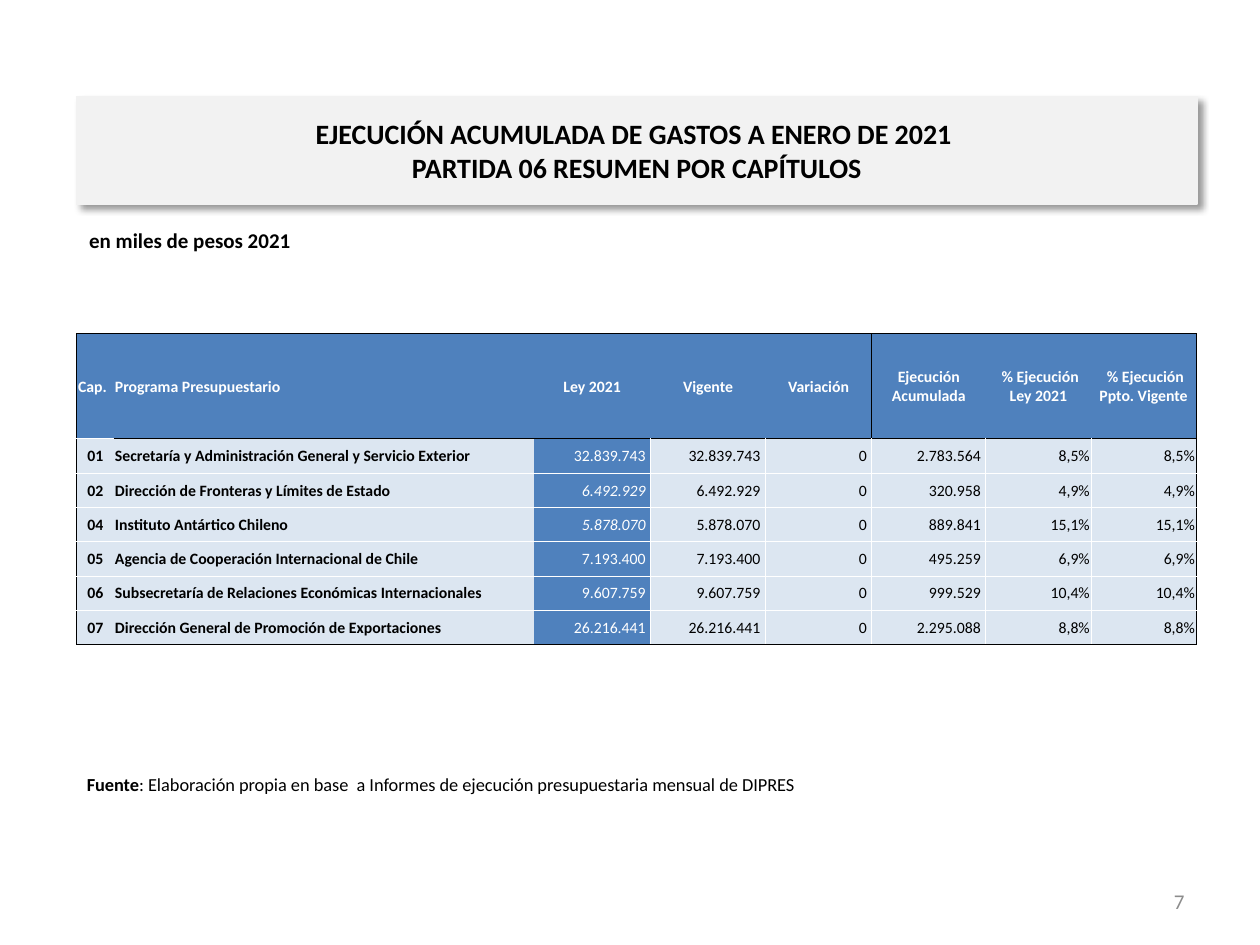
import pptx
import pptx.dml.color
import pptx.enum.shapes
import pptx.enum.text
import pptx.oxml
import pptx.oxml.ns
import pptx.util

COLORS = {"black": "000000", "white": "FFFFFF", "blue": "4F81BD", "pale": "DCE6F1",
          "panel": "F2F2F2", "gray": "8C8C8C"}
ALIGN = pptx.enum.text.PP_ALIGN
MIDDLE = pptx.enum.text.MSO_ANCHOR.MIDDLE
NAMESPACE = pptx.oxml.ns.nsdecls("a")

deck = pptx.Presentation()
deck.slide_width = pptx.util.Inches(10)
deck.slide_height = pptx.util.Inches(7.5)
page = deck.slides.add_slide(deck.slide_layouts[6])


def area(left, top, width, height):
    sides = (deck.slide_width, deck.slide_height) * 2
    return [int(side * share / 100) for side, share in zip(sides, (left, top, width, height))]


def write(para, text, color, align=ALIGN.LEFT, **font_values):
    para.alignment = align
    span = para.add_run()
    span.text = text
    span.font.color.rgb = pptx.dml.color.RGBColor.from_string(COLORS[color])
    for name, value in {"name": "Calibri", **font_values}.items():
        setattr(span.font, name, value)


body_size = pptx.util.Pt(9)
note_size = pptx.util.Pt(10.5)
label_size = pptx.util.Pt(12)
title_size = pptx.util.Pt(16)

labels = [
    (area(5.9, 81.2, 86.5, 3.5), ALIGN.LEFT, "black", note_size,
     [("Fuente", True),
      (": Elaboración propia en base  a Informes de ejecución presupuestaria mensual de DIPRES", False)]),
    (area(71.7, 92.67, 23.3, 5.33), ALIGN.RIGHT, "gray", label_size, [("7", False)]),
    (area(6.1, 23.47, 86, 2.93), ALIGN.LEFT, "black", label_size, [("en miles de pesos 2021", True)]),
]
for place, align, color, size, parts in labels:
    box = page.shapes.add_textbox(*place)
    box.text_frame.word_wrap = True
    if align == ALIGN.RIGHT:
        box.text_frame.vertical_anchor = MIDDLE
    for text, bold in parts:
        write(box.text_frame.paragraphs[0], text, color, align, size=size, bold=bold)

title = page.shapes.add_shape(pptx.enum.shapes.MSO_SHAPE.RECTANGLE, *area(6.1, 10.2, 88.9, 11.4))
title.fill.solid()
for paint in (title.fill.fore_color, title.line.color):
    paint.rgb = pptx.dml.color.RGBColor.from_string(COLORS["panel"])
title.line.width = pptx.util.Pt(0.75)
title.shadow.inherit = False
effects = title._element.spPr.find(pptx.oxml.ns.qn("a:effectLst"))
effects.append(pptx.oxml.parse_xml(
    f'<a:outerShdw {NAMESPACE} blurRad="50800" dist="38100" dir="2700000" algn="tl" rotWithShape="0">'
    f'<a:srgbClr val="{COLORS["black"]}"><a:alpha val="40000"/></a:srgbClr></a:outerShdw>'))
title.text_frame.word_wrap = True
title.text_frame.vertical_anchor = MIDDLE
heading = title.text_frame.paragraphs[0]
write(heading, "EJECUCIÓN ACUMULADA DE GASTOS A ENERO DE 2021 ", "black", ALIGN.CENTER,
      size=title_size, bold=True)
heading.add_line_break()
write(heading, "PARTIDA 06 RESUMEN POR CAPÍTULOS", "black", ALIGN.CENTER, size=title_size, bold=True)

rows = [
    ["Cap.", "Programa Presupuestario", "Ley 2021", "Vigente", "Variación",
     "Ejecución Acumulada", " % Ejecución Ley 2021", " % Ejecución Ppto. Vigente"],
]
chapters = [
    ("01", "Secretaría y Administración General y Servicio Exterior", "32.839.743", "2.783.564", "8,5%"),
    ("02", "Dirección de Fronteras y Límites de Estado", "6.492.929", "320.958", "4,9%"),
    ("04", "Instituto Antártico Chileno", "5.878.070", "889.841", "15,1%"),
    ("05", "Agencia de Cooperación Internacional de Chile", "7.193.400", "495.259", "6,9%"),
    ("06", "Subsecretaría de Relaciones Económicas Internacionales", "9.607.759", "999.529", "10,4%"),
    ("07", "Dirección General de Promoción de Exportaciones", "26.216.441", "2.295.088", "8,8%"),
]
for code, program, budget, spent, percent in chapters:
    rows.append([code, program, budget, budget, "0", spent, percent, percent])

column_shares = [2.93, 33.33, 9.29, 9.1, 8.45, 9.05, 8.35, 8.35]
row_shares = [11.1, 3.7] + [3.62] * 5
last_row, last_column = len(rows) - 1, len(column_shares) - 1
table = page.shapes.add_table(len(rows), len(column_shares),
                              *area(6.1, 35.3, sum(column_shares), sum(row_shares))).table
for column, share in zip(table.columns, column_shares):
    column.width = int(deck.slide_width * share / 100)
for row, share in zip(table.rows, row_shares):
    row.height = int(deck.slide_height * share / 100)

for r, values in enumerate(rows):
    for c, text in enumerate(values):
        header, budget_column = r == 0, c == 2
        cell = table.cell(r, c)
        number_gap = 0.04 if not header and 2 <= c <= 5 else 0.01
        cell_format = {"margin_left": pptx.util.Inches(0.01), "margin_top": pptx.util.Inches(0.01),
                       "margin_right": pptx.util.Inches(number_gap), "margin_bottom": 0,
                       "vertical_anchor": MIDDLE}
        for name, value in cell_format.items():
            setattr(cell, name, value)

        on_blue = header or budget_column
        cell.fill.solid()
        cell.fill.fore_color.rgb = pptx.dml.color.RGBColor.from_string(
            COLORS["blue" if on_blue else "pale"])
        if c == 1 or (header and c == 0):
            align = ALIGN.LEFT
        else:
            align = ALIGN.CENTER if header or c == 0 else ALIGN.RIGHT
        write(cell.text_frame.paragraphs[0], text, "white" if on_blue else "black", align,
              size=body_size, bold=header or c < 2, italic=budget_column and r in (2, 3))

        verticals = []
        for edge in (c, c + 1):
            if edge in (0, last_column + 1) or (header and edge == 5):
                verticals.append("black")
            else:
                verticals.append("white" if not header and edge >= 3 else None)
        horizontals = []
        for edge in (r, r + 1):
            dark = edge in (0, last_row + 1) or (edge == 1 and c > 0)
            horizontals.append("black" if dark else "white")
        properties = cell._tc.get_or_add_tcPr()
        for position, (side, color) in enumerate(zip("LRTB", verticals + horizontals)):
            paint = (f'<a:solidFill><a:srgbClr val="{COLORS[color]}"/></a:solidFill>'
                     if color else "<a:noFill/>")
            properties.insert(position, pptx.oxml.parse_xml(
                f'<a:ln{side} {NAMESPACE} w="6350">{paint}</a:ln{side}>'))

deck.save("out.pptx")
